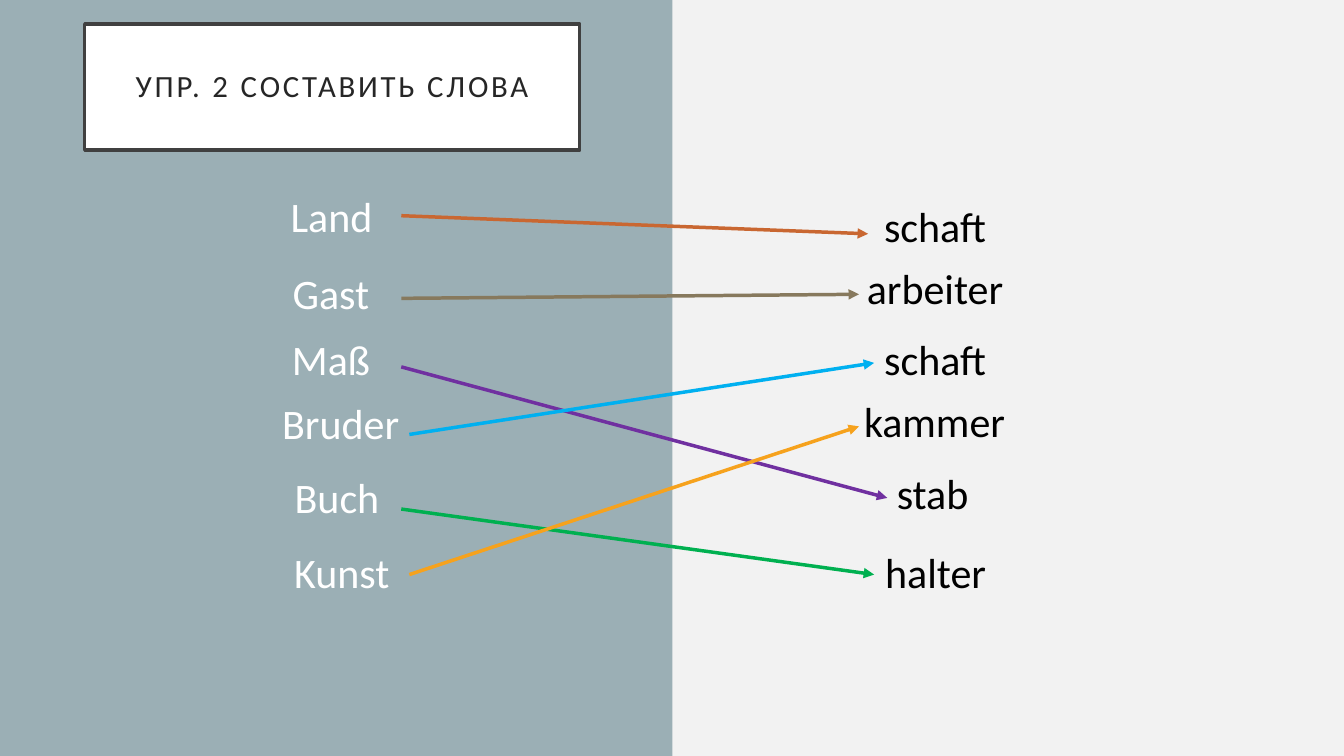
from lxml import etree
from pptx import Presentation
from pptx.dml.color import RGBColor
from pptx.enum.shapes import MSO_CONNECTOR, MSO_SHAPE
from pptx.enum.text import MSO_ANCHOR, PP_ALIGN
from pptx.oxml.ns import qn
from pptx.util import Inches, Pt

RECTANGLE = MSO_SHAPE.RECTANGLE
STRAIGHT = MSO_CONNECTOR.STRAIGHT
MIDDLE = MSO_ANCHOR.MIDDLE
CENTER, LEFT = PP_ALIGN.CENTER, PP_ALIGN.LEFT

FONT = "Calibri"
WHITE = RGBColor(0xFF, 0xFF, 0xFF)
BLACK = RGBColor(0x00, 0x00, 0x00)
LIGHT_GRAY = RGBColor(0xF2, 0xF2, 0xF2)
BLUE_GRAY = RGBColor(0x9B, 0xAF, 0xB5)
FRAME_GRAY = RGBColor(0x40, 0x40, 0x40)
TITLE_GRAY = RGBColor(0x26, 0x26, 0x26)
RUST = RGBColor(0xC9, 0x67, 0x31)
TAUPE = RGBColor(0x87, 0x79, 0x5D)
PURPLE = RGBColor(0x70, 0x30, 0xA0)
BLUE = RGBColor(0x00, 0xB0, 0xF0)
GREEN = RGBColor(0x00, 0xB0, 0x50)
ORANGE = RGBColor(0xF6, 0xA2, 0x1D)


def add_panel(left, top, width, height, color):
    panel = slide.shapes.add_shape(
        RECTANGLE, Inches(left), Inches(top), Inches(width), Inches(height))
    panel.shadow.inherit = False
    panel.fill.solid()
    panel.fill.fore_color.rgb = color
    panel.line.fill.background()
    return panel


def add_word(word, left, top, width, color, align=CENTER, wrap=True):
    box = slide.shapes.add_textbox(
        Inches(left), Inches(top), Inches(width), Inches(0.61))
    box.text_frame.word_wrap = wrap
    paragraph = box.text_frame.paragraphs[0]
    paragraph.text = word
    paragraph.alignment = align
    paragraph.font.name = FONT
    paragraph.font.size = Pt(30)
    paragraph.font.color.rgb = color
    return paragraph


prs = Presentation()
prs.slide_width = Inches(13.33)
prs.slide_height = Inches(7.5)
slide = prs.slides.add_slide(prs.slide_layouts[6])
slide.background.fill.solid()
slide.background.fill.fore_color.rgb = LIGHT_GRAY

add_panel(0, 0, 6.67, 7.5, BLUE_GRAY)

# Title
title = add_panel(0.84, 0.24, 4.91, 1.25, WHITE)
title.line.color.rgb = FRAME_GRAY
title.line.width = Pt(2.5)
title_frame = title.text_frame
title_frame.word_wrap = True
title_frame.vertical_anchor = MIDDLE
title_frame.margin_left = title_frame.margin_right = Inches(0.2)
title_frame.margin_top = title_frame.margin_bottom = Inches(0.2)
heading = title_frame.paragraphs[0]
heading.text = "УПР. 2 СОСТАВИТЬ СЛОВА"
heading.alignment = CENTER
heading.line_spacing = 0.9
heading.font.name = FONT
heading.font.size = Pt(22)
heading.font.color.rgb = TITLE_GRAY
heading.runs[0].font._element.set("spc", "200")

# First halves of the compound words
land = add_word("Land ", 1.26, 1.94, 4.15, WHITE)
land.line_spacing = 0.8
for word, left, top, width, align, wrap in [
    ("Gast ", 2.31, 2.6, 2.04, CENTER, True),
    ("Maß ", 1.74, 3.26, 3.18, CENTER, True),
    ("Bruder", 2.7, 3.89, 1.77, LEFT, True),
    ("Buch ", 2.72, 4.63, 1.34, CENTER, True),
    ("Kunst", 2.8, 5.37, 1.18, CENTER, False),
]:
    add_word(word, left, top, width, WHITE, align, wrap)

# Second halves
for word, left, top, width, wrap in [
    ("schaft", 7.96, 1.94, 2.63, True),
    ("arbeiter", 8.29, 2.56, 1.97, True),
    ("schaft", 8.52, 3.26, 1.51, True),
    ("kammer", 8.47, 3.87, 1.6, False),
    ("stab", 8.35, 4.59, 1.8, True),
    ("halter", 8.24, 5.37, 2.08, True),
]:
    add_word(word, left, top, width, BLACK, wrap=wrap)

# Arrows from each first half to its second half
for x1, y1, x2, y2, color in [
    (3.98, 2.14, 8.61, 2.32, RUST),
    (3.98, 2.96, 8.52, 2.92, TAUPE),
    (3.98, 3.64, 8.8, 4.94, PURPLE),
    (4.06, 4.31, 8.67, 3.6, BLUE),
    (3.98, 5.05, 8.67, 5.7, GREEN),
    (4.06, 5.7, 8.52, 4.23, ORANGE),
]:
    arrow = slide.shapes.add_connector(
        STRAIGHT, Inches(x1), Inches(y1), Inches(x2), Inches(y2))
    arrow.line.color.rgb = color
    arrow.line.width = Pt(2.5)
    etree.SubElement(arrow.line._get_or_add_ln(), qn("a:tailEnd"), type="triangle")
    etree.SubElement(arrow._element.spPr, qn("a:effectLst"))

prs.save("out.pptx")
